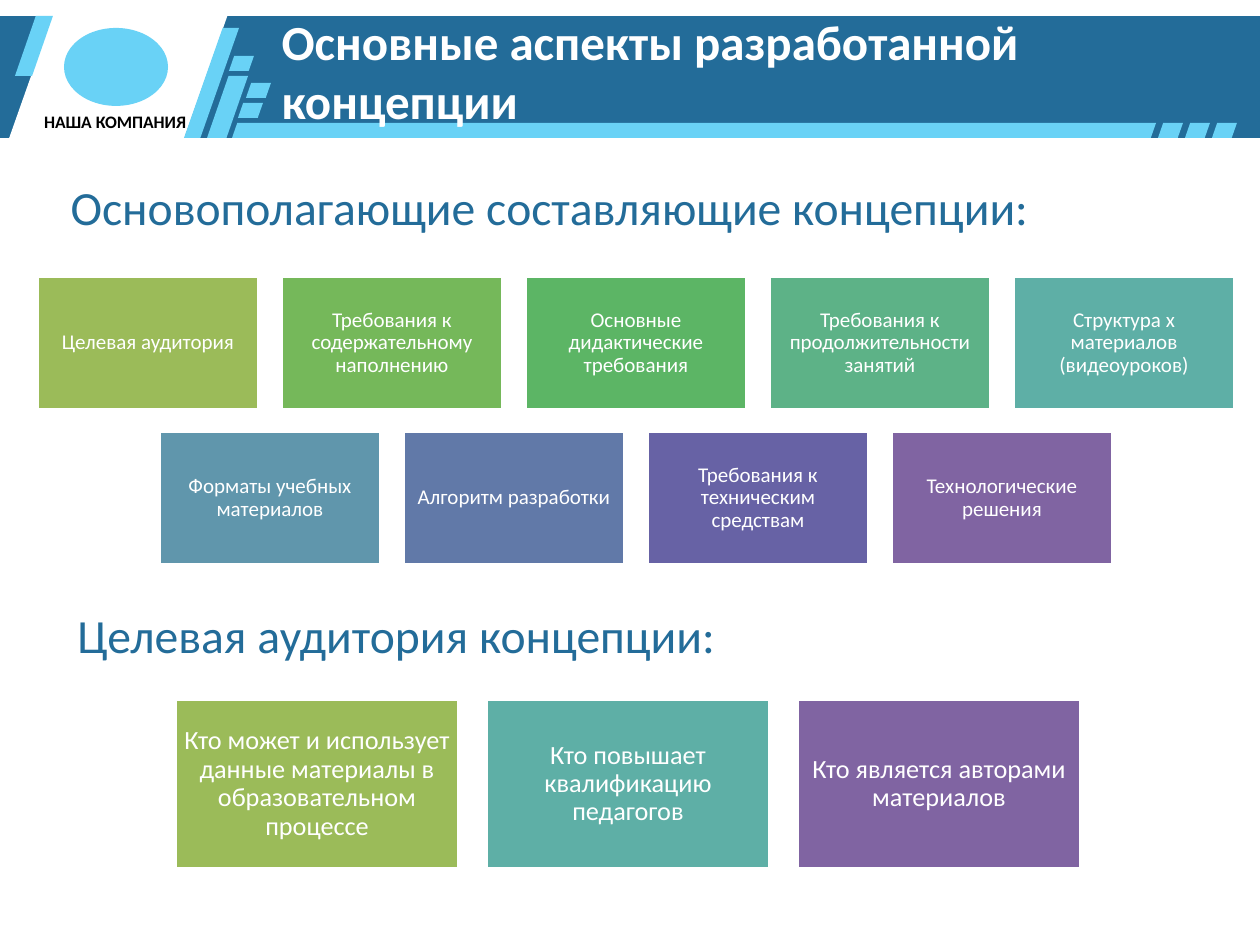
from pptx import Presentation
from pptx.dml.color import RGBColor
from pptx.enum.shapes import MSO_SHAPE
from pptx.enum.text import MSO_ANCHOR, MSO_AUTO_SIZE, PP_ALIGN
from pptx.util import Emu, Pt

RECTANGLE, OVAL = MSO_SHAPE.RECTANGLE, MSO_SHAPE.OVAL
PARALLELOGRAM = MSO_SHAPE.PARALLELOGRAM
LEFT, CENTER = PP_ALIGN.LEFT, PP_ALIGN.CENTER
TOP, MIDDLE = MSO_ANCHOR.TOP, MSO_ANCHOR.MIDDLE
FIXED = MSO_AUTO_SIZE.NONE

PX_PER_INCH = 126
FONT = "Calibri"
NAVY, SKY, WHITE, BLACK = "236C99", "69D2F6", "FFFFFF", "000000"

SLANTS = [
    ((0, 0, 233, 164), 0.353, WHITE),
    ((15, 16, 38, 60), 0.549, SKY),
    ((184, 28, 55, 110), 0.703, SKY),
    ((207, 76, 41, 62), 0.525, SKY),
    ((232, 123, 924, 15), 0.348, SKY),
]
SMALL_SLANTS = [(229, 56), (238, 103), (246, 83), (1158, 123), (1185, 123), (1212, 123)]

TOP_COMPONENTS = [
    ("Целевая аудитория", "9BBB59"),
    ("Требования к содержательному наполнению", "75B85A"),
    ("Основные дидактические требования", "5CB565"),
    ("Требования к продолжительности занятий", "5DB287"),
    ("Структура х материалов (видеоуроков)", "5EAFA6"),
]
BOTTOM_COMPONENTS = [
    ("Форматы учебных материалов", "6096AC"),
    ("Алгоритм разработки", "6179A8"),
    ("Требования к техническим средствам", "6762A5"),
    ("Технологические решения", "8064A2"),
]
AUDIENCES = [
    ("Кто может и использует данные материалы в образовательном процессе", "9BBB59"),
    ("Кто повышает квалификацию педагогов", "5EAFA6"),
    ("Кто является авторами материалов", "8064A2"),
]


def px(value):
    """Turn pixels into EMU."""
    return Emu(round(value * 914400 / PX_PER_INCH))


def color(hex_text):
    """Turn a hex string into a colour."""
    return RGBColor.from_string(hex_text)


def place(shape, box):
    """Move and size a shape to a pixel box."""
    shape.left, shape.top, shape.width, shape.height = map(px, box)


def write(shape, text, size, hex_text, bold=False, align=LEFT, anchor=TOP):
    """Put one formatted paragraph into a shape and return it."""
    frame = shape.text_frame
    frame.word_wrap = True
    frame.auto_size = FIXED
    frame.vertical_anchor = anchor
    frame.text = text
    paragraph = frame.paragraphs[0]
    paragraph.alignment = align
    font = paragraph.font
    font.name, font.size, font.bold = FONT, Pt(size), bold
    font.color.rgb = color(hex_text)
    return paragraph


def add_block(slide, kind, box, fill):
    """Add a flat filled shape without an outline."""
    shape = slide.shapes.add_shape(kind, *map(px, box))
    shape.shadow.inherit = False
    shape.fill.solid()
    shape.fill.fore_color.rgb = color(fill)
    shape.line.fill.background()
    return shape


def add_slant(slide, box, skew, fill):
    """Add a parallelogram with the given skew."""
    add_block(slide, PARALLELOGRAM, box, fill).adjustments[0] = skew


def add_text(slide, box, *args, **options):
    """Add a text box with one paragraph."""
    write(slide.shapes.add_textbox(*map(px, box)), *args, **options)


def add_card_row(slide, cards, box, pitch, size, inset):
    """Add evenly spaced cards, the first one at the given box."""
    left, top, width, height = box
    for index, (label, fill) in enumerate(cards):
        card = add_block(slide, RECTANGLE, (left + index * pitch, top, width, height), fill)
        card.line.color.rgb = color(WHITE)
        card.line.width = Pt(2)
        frame = card.text_frame
        frame.margin_left = frame.margin_right = px(inset)
        frame.margin_top = frame.margin_bottom = px(inset)
        paragraph = write(card, label, size, WHITE, align=CENTER, anchor=MIDDLE)
        paragraph.line_spacing = 0.9


def add_header(slide):
    """Add the banner, the emblem, its caption and the slide title."""
    add_block(slide, RECTANGLE, (0, 16, 1260, 122), NAVY)
    for box, skew, fill in SLANTS:
        add_slant(slide, box, skew, fill)
    for left, top in SMALL_SLANTS:
        add_slant(slide, (left, top, 25, 15), 0.348, SKY)
    add_block(slide, OVAL, (64, 28, 104, 78), SKY)
    add_text(slide, (30, 105, 170, 34), "НАША КОМПАНИЯ", 10, BLACK, bold=True, align=CENTER)
    title = slide.shapes.title
    place(title, (269, 5, 955, 131))
    write(title, "Основные аспекты разработанной концепции", 28, WHITE, bold=True, anchor=MIDDLE)
    title.element.getparent().append(title.element)


def main():
    """Build and save the slide."""
    presentation = Presentation()
    presentation.slide_width, presentation.slide_height = px(1260), px(945)
    slide = presentation.slides.add_slide(presentation.slide_layouts[0])
    add_header(slide)
    subtitle = slide.placeholders[1]
    place(subtitle, (58, 172, 992, 63))
    write(subtitle, "Основополагающие составляющие концепции:", 27.2, NAVY).space_before = Pt(0)
    add_card_row(slide, TOP_COMPONENTS, (37, 276, 222, 134), 244, 12, 6)
    add_card_row(slide, BOTTOM_COMPONENTS, (159, 431, 222, 134), 244, 12, 6)
    add_text(slide, (65, 600, 992, 63), "Целевая аудитория концепции:", 27.2, NAVY)
    add_card_row(slide, AUDIENCES, (175, 699, 284, 170), 311, 15, 8)
    presentation.save("out.pptx")


if __name__ == "__main__":
    main()
